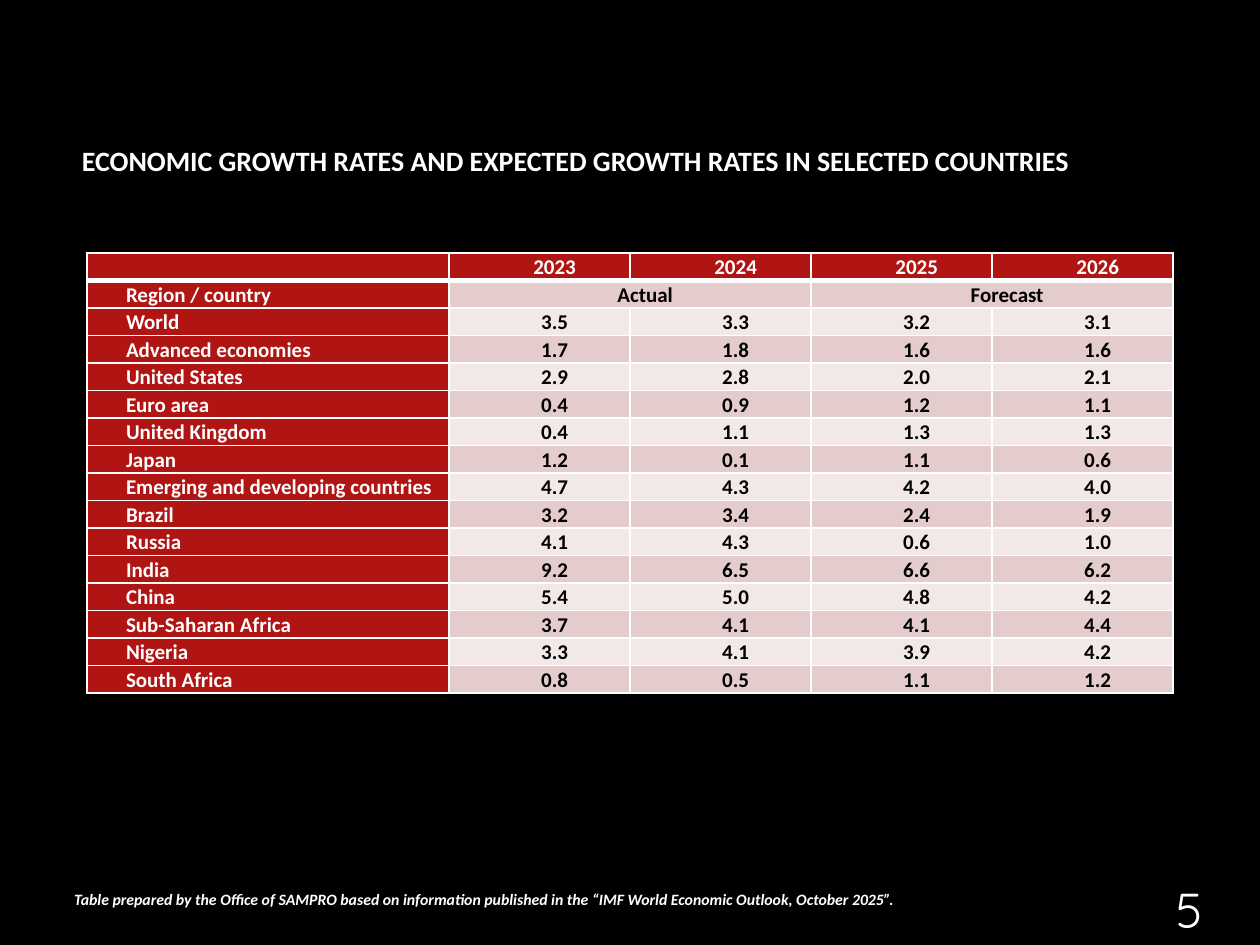
from lxml.etree import SubElement
from pptx import Presentation
from pptx.dml.color import RGBColor
from pptx.enum.text import MSO_ANCHOR, MSO_AUTO_SIZE, PP_ALIGN
from pptx.oxml import parse_xml
from pptx.oxml.ns import nsdecls, qn
from pptx.util import Inches, Pt

WHITE, BLACK, RED = "FFFFFF", "000000", "B01513"
BANDS = ("F2E8E7", "E4CCCC")
YEARS = ("2023", "2024", "2025", "2026")
GROWTH = (
    ("World", "3.5", "3.3", "3.2", "3.1"),
    ("Advanced economies", "1.7", "1.8", "1.6", "1.6"),
    ("United States", "2.9", "2.8", "2.0", "2.1"),
    ("Euro area", "0.4", "0.9", "1.2", "1.1"),
    ("United Kingdom", "0.4", "1.1", "1.3", "1.3"),
    ("Japan", "1.2", "0.1", "1.1", "0.6"),
    ("Emerging and developing countries", "4.7", "4.3", "4.2", "4.0"),
    ("Brazil", "3.2", "3.4", "2.4", "1.9"),
    ("Russia", "4.1", "4.3", "0.6", "1.0"),
    ("India", "9.2", "6.5", "6.6", "6.2"),
    ("China", "5.4", "5.0", "4.8", "4.2"),
    ("Sub-Saharan Africa", "3.7", "4.1", "4.1", "4.4"),
    ("Nigeria", "3.3", "4.1", "3.9", "4.2"),
    ("South Africa", "0.8", "0.5", "1.1", "1.2"),
)
ROWS = (
    ("",) + YEARS,
    ("Region / country", "Actual", "", "Forecast", ""),
) + GROWTH


def color(value):
    return RGBColor.from_string(value)


def style_text(para, size, ink, font="Calibri", bold=True, italic=False):
    for span in para.runs:
        span.font.name = font
        span.font.size = Pt(size)
        span.font.bold = bold
        span.font.italic = italic
        span.font.color.rgb = color(ink)


def fill_frame(shape, text, anchor, align, size, **look):
    frame = shape.text_frame
    frame.text = text
    frame.word_wrap = True
    frame.vertical_anchor = anchor
    para = frame.paragraphs[0]
    para.alignment = align
    style_text(para, size, WHITE, **look)
    return frame


def place_title(page, box):
    title = page.shapes.title
    title.left, title.top, title.width, title.height = box
    frame = fill_frame(
        title,
        "ECONOMIC GROWTH RATES AND EXPECTED GROWTH RATES IN SELECTED COUNTRIES",
        MSO_ANCHOR.MIDDLE, PP_ALIGN.LEFT, 16)
    frame.auto_size = MSO_AUTO_SIZE.SHAPE_TO_FIT_TEXT


def place_source_note(page, box):
    frame = fill_frame(
        page.shapes.add_textbox(*box),
        "Table prepared by the Office of SAMPRO based on information published "
        "in the “IMF World Economic Outlook, October 2025”.",
        MSO_ANCHOR.MIDDLE, PP_ALIGN.LEFT, 9, italic=True)
    frame.auto_size = MSO_AUTO_SIZE.SHAPE_TO_FIT_TEXT


def place_page_number(page, box):
    fill_frame(page.shapes.add_textbox(*box), "5", MSO_ANCHOR.BOTTOM,
               PP_ALIGN.CENTER, 28, font="Quicksand", bold=False)


def set_borders(cell, top, bottom):
    properties = cell._tc.get_or_add_tcPr()
    widths = (("lnL", 1), ("lnR", 1), ("lnT", top), ("lnB", bottom))
    for position, (side, width) in enumerate(widths):
        properties.insert(position, parse_xml(
            f'<a:{side} {nsdecls("a")} w="{Pt(width)}"><a:solidFill>'
            f'<a:srgbClr val="{WHITE}"/></a:solidFill></a:{side}>'))


def format_cell(cell, text, row, column):
    is_red = row == 0 or column == 0
    cell.fill.solid()
    cell.fill.fore_color.rgb = color(RED if is_red else BANDS[row % 2])
    cell.margin_left = cell.margin_right = Inches(0.07)
    cell.margin_top = cell.margin_bottom = 0
    para = cell.text_frame.paragraphs[0]
    para.line_spacing = 1.07
    para.alignment = PP_ALIGN.CENTER if column else PP_ALIGN.LEFT
    para._p.get_or_add_pPr().set("marL", str(Inches(0.24)))
    if text:
        para.text = text
        style_text(para, 12, WHITE if is_red else BLACK)
    else:
        # An empty cell keeps the row low only with a small end mark
        SubElement(para._p, qn("a:endParaRPr"), sz="1200")
    set_borders(cell, top=3 if row == 1 else 1, bottom=3 if row == 0 else 1)


def place_growth_table(page, box):
    left, top, width, height = box
    table = page.shapes.add_table(
        len(ROWS), len(ROWS[0]), left, top, width, height).table
    # The label column is as wide as two of the four year columns
    unit = width // 6
    for index, column in enumerate(table.columns):
        column.width = unit if index else 2 * unit
    for line in table.rows:
        line.height = height // len(ROWS)
    for row, values in enumerate(ROWS):
        for column, text in enumerate(values):
            format_cell(table.cell(row, column), text, row, column)
    for first in (1, 3):
        table.cell(1, first).merge(table.cell(1, first + 1))


def box_of(left, top, width, height):
    return tuple(Inches(length) for length in (left, top, width, height))


def main():
    deck = Presentation()
    deck.slide_width, deck.slide_height = Inches(10), Inches(7.5)
    page = deck.slides.add_slide(deck.slide_layouts[5])
    page.background.fill.solid()
    page.background.fill.fore_color.rgb = color(BLACK)

    # Regions from top to bottom
    place_title(page, box_of(0.55, 1.09, 9.72, 0.37))
    place_growth_table(page, box_of(0.69, 2.01, 8.62, 3.49))
    place_source_note(page, box_of(0.49, 7.01, 9.42, 0.25))
    place_page_number(page, box_of(8.97, 6.77, 0.94, 0.73))

    deck.save("out.pptx")


if __name__ == "__main__":
    main()
